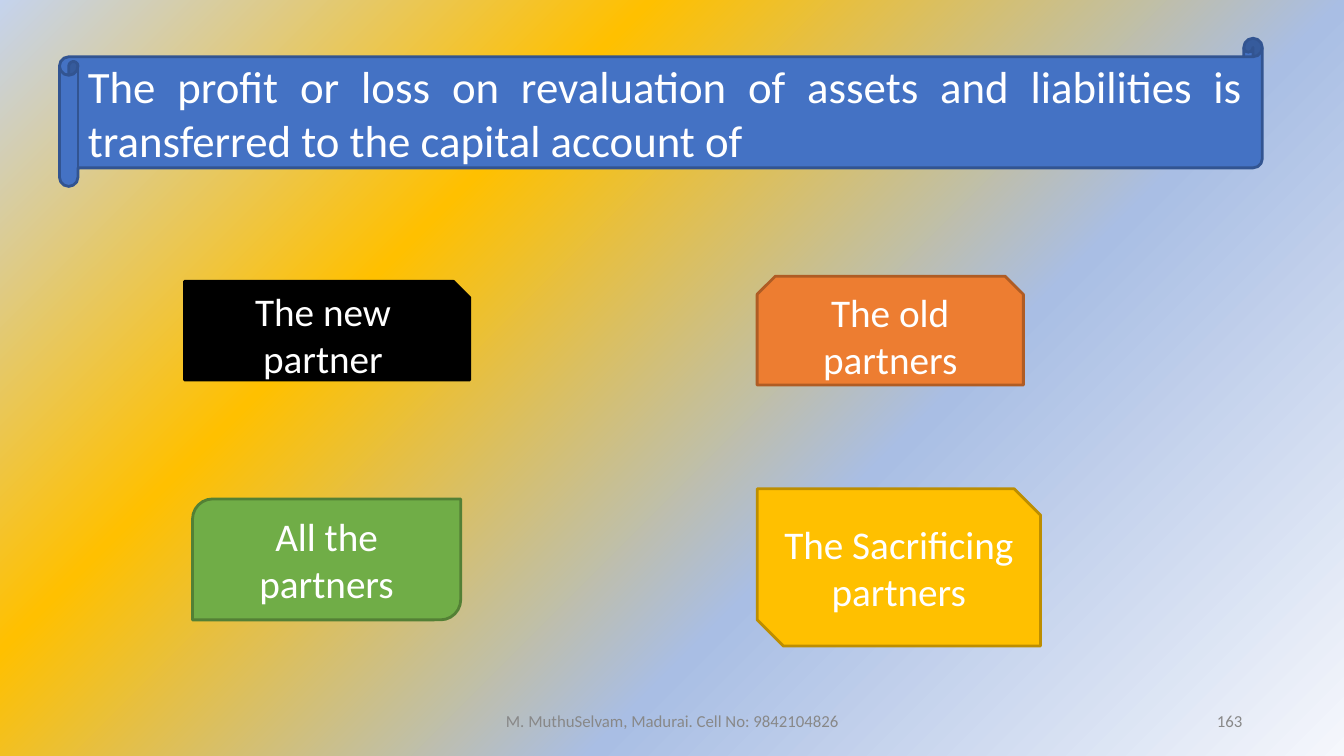
from pptx import Presentation
from pptx.dml.color import RGBColor as RGB
from pptx.enum.shapes import MSO_SHAPE as SHAPE
from pptx.enum.text import MSO_ANCHOR as ANCHOR, PP_ALIGN as ALIGN
from pptx.oxml import parse_xml
from pptx.oxml.ns import nsdecls, qn
from pptx.util import Inches, Pt

THEME = {
    "font": "Calibri",
    "white": "FFFFFF",
    "grey": "888888",
    "question": 32,
    "option": 28,
    "footer": 12,
    "line": 2,
    "scroll": ("4472C4", "325491"),
    "black": ("000000", "000000"),
    "orange": ("ED7D31", "AF5C24"),
    "gold": ("FFC000", "BD8E00"),
    "green": ("70AD47", "538035"),
    "background": [(0, "F5F7FC"), (36, "A9BEE4"), (69, "FFC000"), (100, "C5D3ED")],
}


def write(sp, text, size, color, align):
    tf = sp.text_frame
    tf.word_wrap = True
    tf.vertical_anchor = ANCHOR.MIDDLE
    p = tf.paragraphs[0]
    p.alignment = align
    r = p.add_run()
    r.text = text
    for name, value in {"name": THEME["font"], "size": Pt(THEME[size])}.items():
        setattr(r.font, name, value)
    r.font.color.rgb = RGB.from_string(THEME[color])


prs = Presentation()
prs.slide_width, prs.slide_height = Inches(13.33), Inches(7.5)
s = prs.slides.add_slide(prs.slide_layouts[6])

s.background.fill.gradient()
old = s.element.find(".//" + qn("a:gradFill"))
stops = "".join(
    f'<a:gs pos="{pos * 1000}"><a:srgbClr val="{color}"/></a:gs>'
    for pos, color in THEME["background"]
)
gradient = parse_xml(
    f'<a:gradFill {nsdecls("a")} rotWithShape="1"><a:gsLst>{stops}</a:gsLst>'
    '<a:path path="circle"><a:fillToRect l="100000" t="100000"/></a:path></a:gradFill>'
)
old.getparent().replace(old, gradient)

question = "The profit or loss on revaluation of assets and liabilities is transferred to the capital account of"
boxes = [
    (SHAPE.HORIZONTAL_SCROLL, (0.59, 0.38, 11.93, 1.47), "scroll", question, "question", ALIGN.JUSTIFY),
    (SHAPE.SNIP_1_RECTANGLE, (1.83, 2.79, 2.83, 0.98), "black", "The new partner", "option", ALIGN.CENTER),
    (SHAPE.SNIP_2_SAME_RECTANGLE, (7.51, 2.74, 2.64, 1.08), "orange", "The old partners", "option", ALIGN.CENTER),
    (SHAPE.SNIP_2_DIAG_RECTANGLE, (7.51, 4.85, 2.81, 1.56), "gold", "The Sacrificing partners", "option", ALIGN.CENTER),
    (SHAPE.ROUND_2_DIAG_RECTANGLE, (1.91, 4.95, 2.66, 1.2), "green", "All the partners", "option", ALIGN.CENTER),
]
for kind, place, scheme, text, size, align in boxes:
    sp = s.shapes.add_shape(kind, *map(Inches, place))
    fill, line = THEME[scheme]
    sp.shadow.inherit = False
    sp.fill.solid()
    sp.fill.fore_color.rgb = RGB.from_string(fill)
    sp.line.color.rgb = RGB.from_string(line)
    sp.line.width = Pt(THEME["line"])
    write(sp, text, size, "white", align)

footers = [
    (4.42, 4.5, "M. MuthuSelvam, Madurai. Cell No: 9842104826", ALIGN.CENTER),
    (9.42, 3, "163", ALIGN.RIGHT),
]
for left, width, text, align in footers:
    sp = s.shapes.add_textbox(Inches(left), Inches(6.95), Inches(width), Inches(0.4))
    write(sp, text, "footer", "grey", align)

prs.save("out.pptx")
